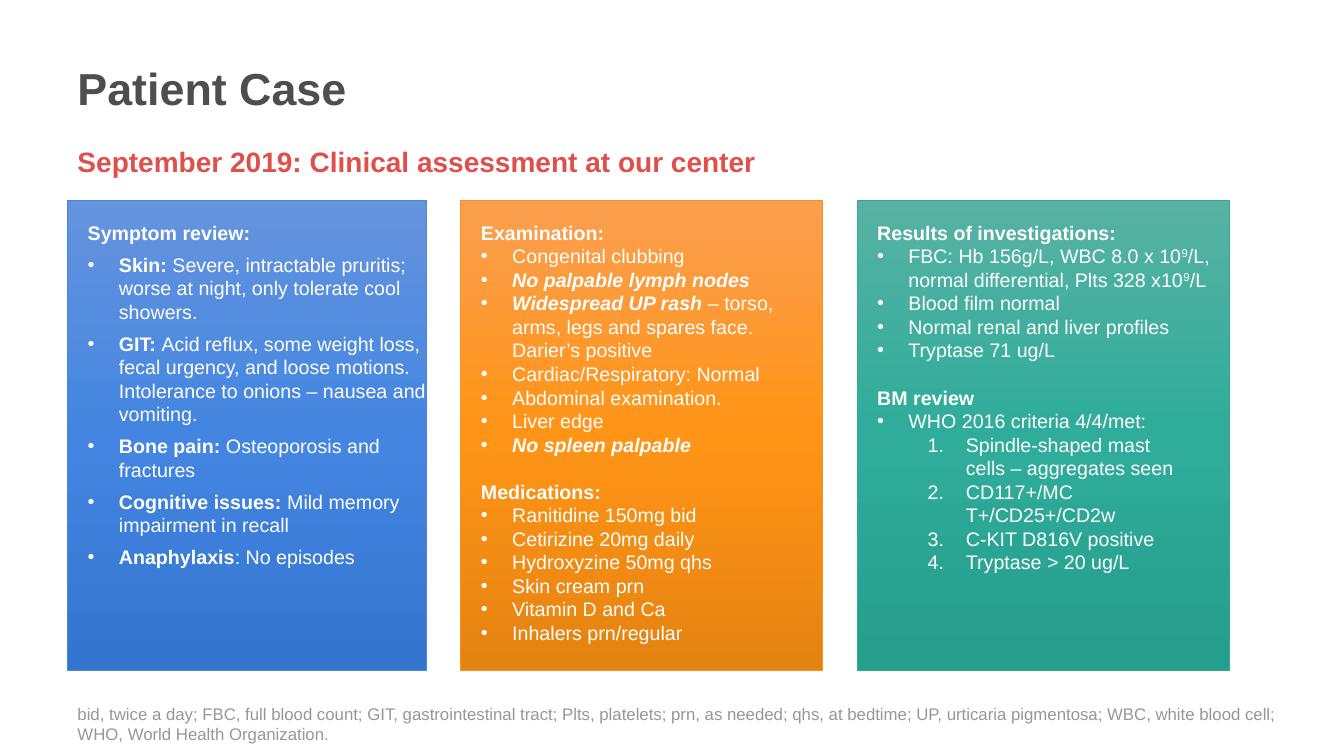
from copy import deepcopy

from lxml.etree import SubElement
from pptx import Presentation
from pptx.dml.color import RGBColor
from pptx.enum.shapes import MSO_SHAPE as Shape
from pptx.enum.text import MSO_ANCHOR as Anchor, PP_ALIGN as Align
from pptx.oxml.ns import qn
from pptx.util import Inches, Pt

FONT = "Arial"
COLORS = {
    "title": "4D4E4D", "sub": "DF504B", "note": "979797", "text": "FFFFFF",
    "blue": ("6594DE", "4385E0", "3375CF"), "blue line": "4A86D9",
    "orange": ("FB9F4F", "FF9416", "E58311"), "orange line": "F7931E",
    "green": ("57B2A3", "2FAC9A", "259E8C"), "green line": "35A696",
}
LEFT, TOP, TALL, GAP = 0.67, 1.99, 4.66, 0.34
LINE = 16.8  # points left free above a second heading

# Paragraph: kind, then runs. Run: plain text or (text, style),
# with b for bold, i for italic and s for superscript.
SYMPTOMS = [
    ("head", "Symptom review:"),
    ("dot", ("Skin: ", "b"), "Severe, intractable pruritis; worse at night, "
     "only tolerate cool showers."),
    ("dot", ("GIT: ", "b"), "Acid reflux, some weight loss, fecal urgency, and "
     "loose motions. Intolerance to onions – nausea and vomiting."),
    ("dot", ("Bone pain: ", "b"), "Osteoporosis and fractures"),
    ("dot", ("Cognitive issues: ", "b"), "Mild memory impairment in recall"),
    ("dot", ("Anaphylaxis", "b"), ": No episodes"),
]
EXAM = [
    ("head", "Examination:"),
    ("dot", "Congenital clubbing"),
    ("dot", ("No palpable lymph nodes", "bi")),
    ("dot", ("Widespread UP rash ", "bi"),
     "– torso, arms, legs and spares face. Darier’s positive"),
    ("dot", "Cardiac/Respiratory: Normal"),
    ("dot", "Abdominal examination."),
    ("dot", "Liver edge"),
    ("dot", ("No spleen palpable", "bi")),
    ("head", "Medications:"),
    ("dot", "Ranitidine 150mg bid"),
    ("dot", "Cetirizine 20mg daily"),
    ("dot", "Hydroxyzine 50mg qhs"),
    ("dot", "Skin cream prn"),
    ("dot", "Vitamin D and Ca"),
    ("dot", "Inhalers prn/regular"),
]
RESULTS = [
    ("head", "Results of investigations:"),
    ("dot", "FBC: Hb 156g/L, WBC 8.0 x 10", ("9", "s"),
     "/L, normal differential, Plts 328 x10", ("9", "s"), "/L"),
    ("dot", "Blood film normal"),
    ("dot", "Normal renal and liver profiles"),
    ("dot", "Tryptase 71 ug/L"),
    ("head", "BM review"),
    ("dot", "WHO 2016 criteria 4/4/met:"),
    ("num", "Spindle-shaped mast\ncells – aggregates seen"),
    ("num", "CD117+/MC T+/CD25+/CD2w"),
    ("num", "C-KIT D816V positive"),
    ("num", "Tryptase > 20 ug/L"),
]
# name, width, right inset, space after, paragraphs
PANELS = [
    ("blue", 3.56, 0, 6, SYMPTOMS),
    ("orange", 3.59, 0.1, 0, EXAM),
    ("green", 3.69, 0.1, 0, RESULTS),
]


def rgb(value):
    return RGBColor.from_string(value)


def style(para, size, color, bold=None):
    font = para.font
    font.name, font.size, font.bold = FONT, Pt(size), bold
    font.color.rgb = rgb(color)


def add_label(slide, box, text, size, color, bold=False, anchor=Anchor.TOP):
    frame = slide.shapes.add_textbox(*map(Inches, box)).text_frame
    frame.word_wrap, frame.vertical_anchor = True, anchor
    para = frame.paragraphs[0]
    para.text = text
    style(para, size, color, bold)


def add_mark(para, kind):
    """Give a paragraph its hanging indent and its dot or number."""
    props = para._p.get_or_add_pPr()
    left, hang = (0.31, 0.31) if kind == "dot" else (0.88, 0.38)
    props.set("marL", str(Inches(left)))
    props.set("indent", str(-Inches(hang)))
    SubElement(props, qn("a:buFont")).set("typeface", FONT)
    if kind == "dot":
        SubElement(props, qn("a:buChar")).set("char", "•")
    else:
        para.level = 1
        SubElement(props, qn("a:buAutoNum")).set("type", "arabicPeriod")


def add_run(para, text, look):
    for i, part in enumerate(text.split("\n")):
        if i:
            para.add_line_break()
        run = para.add_run()
        run.text = part
        if "b" in look:
            run.font.bold = True
        if "i" in look:
            run.font.italic = True
        if "s" in look:
            run._r.get_or_add_rPr().set("baseline", "30000")


def fill_down(shape, colors):
    """Fill a shape with three colours from top to bottom."""
    fill = shape.fill
    fill.gradient()
    fill.gradient_angle = 270
    stops = shape._element.spPr.find(qn("a:gradFill")).find(qn("a:gsLst"))
    stops.insert(1, deepcopy(stops[0]))
    for i, (stop, color) in enumerate(zip(fill.gradient_stops, colors)):
        stop.position = i / 2
        stop.color.rgb = rgb(color)


def add_panel(slide, box, name, right, after, paras):
    shape = slide.shapes.add_shape(Shape.RECTANGLE, *map(Inches, box))
    shape.shadow.inherit = False
    fill_down(shape, COLORS[name])
    shape.line.color.rgb = rgb(COLORS[name + " line"])
    shape.line.width = Pt(0.5)
    frame = shape.text_frame
    frame.word_wrap, frame.vertical_anchor = True, Anchor.TOP
    frame.margin_left = frame.margin_top = Inches(0.2)
    frame.margin_right, frame.margin_bottom = Inches(right), Inches(0.05)
    for i, (kind, *runs) in enumerate(paras):
        para = frame.add_paragraph() if i else frame.paragraphs[0]
        para.alignment = Align.LEFT
        para.space_after = Pt(after)
        if kind != "head":
            add_mark(para, kind)
        elif i:
            para.space_before = Pt(LINE)
        for run in runs:
            text, look = (run, "") if isinstance(run, str) else run
            add_run(para, text, look)
        style(para, 14, COLORS["text"], kind == "head" or None)


def main():
    deck = Presentation()
    deck.slide_width, deck.slide_height = Inches(13.33), Inches(7.5)
    slide = deck.slides.add_slide(deck.slide_layouts[6])
    add_label(slide, (LEFT, 0.22, 11.75, 1.3), "Patient Case", 32,
              COLORS["title"], True, Anchor.MIDDLE)
    add_label(slide, (LEFT, 1.38, 11.75, 0.61),
              "September 2019: Clinical assessment at our center", 20,
              COLORS["sub"], True)
    left = LEFT
    for name, width, right, after, paras in PANELS:
        add_panel(slide, (left, TOP, width, TALL), name, right, after, paras)
        left += width + GAP
    add_label(slide, (LEFT, 6.95, 12.1, 0.48),
              "bid, twice a day; FBC, full blood count; GIT, gastrointestinal "
              "tract; Plts, platelets; prn, as needed; qhs, at bedtime; UP, "
              "urticaria pigmentosa; WBC, white blood cell; WHO, World Health "
              "Organization.", 12, COLORS["note"], anchor=Anchor.BOTTOM)
    deck.save("out.pptx")


if __name__ == "__main__":
    main()
